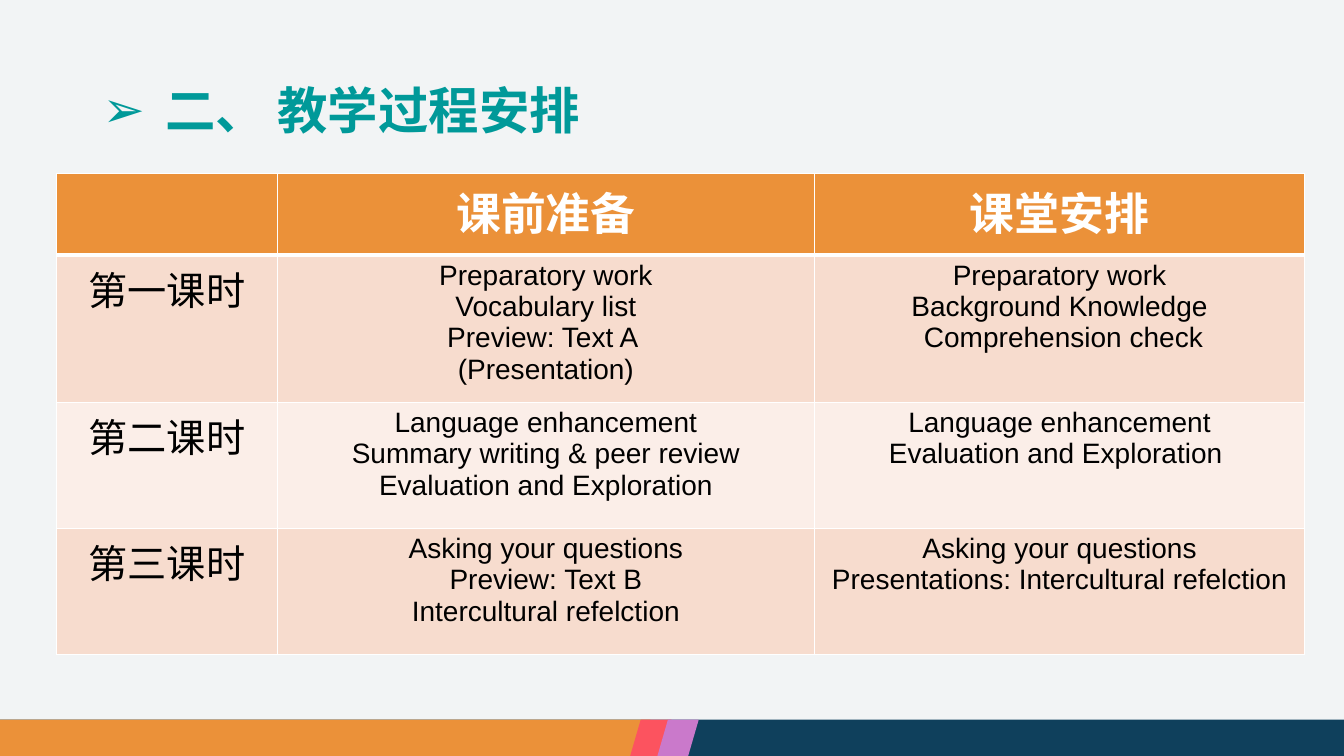
import lxml.etree
import pptx
import pptx.dml.color
import pptx.enum.shapes
import pptx.enum.text
import pptx.oxml.ns
import pptx.util

RGB = pptx.dml.color.RGBColor
SHAPE = pptx.enum.shapes.MSO_SHAPE
ALIGN = pptx.enum.text.PP_ALIGN
ANCHOR = pptx.enum.text.MSO_ANCHOR
qn = pptx.oxml.ns.qn

# Colours
PAPER = RGB(0xF2, 0xF4, 0xF5)
NAVY = RGB(0x0F, 0x40, 0x5C)
ORANGE = RGB(0xEB, 0x91, 0x39)
RED = RGB(0xFC, 0x53, 0x5F)
PURPLE = RGB(0xCA, 0x79, 0xCB)
TEAL = RGB(0x00, 0x99, 0x99)
PEACH = RGB(0xF7, 0xDC, 0xCE)
CREAM = RGB(0xFB, 0xEE, 0xE8)
WHITE = RGB(0xFF, 0xFF, 0xFF)
BLACK = RGB(0, 0, 0)

# Text formats
TITLE = {"size": 36, "bold": True, "color": TEAL}
HEAD = {"size": 32, "bold": True, "color": WHITE}
LABEL = {"size": 28, "bold": False, "color": BLACK}
BODY = {"size": 20, "bold": False, "color": BLACK}

# Footer: left, width, preset, colour
BAND = [
    (0, 1333, SHAPE.RECTANGLE, NAVY),
    (0, 645, SHAPE.RECTANGLE, ORANGE),
    (625, 41, SHAPE.PARALLELOGRAM, RED),
    (652, 41, SHAPE.PARALLELOGRAM, PURPLE),
]

# Lesson plan: one list of lines per cell
COLS = [219, 533, 486]
ROWS = [81, 146, 125, 125]
PLAN = [
    [[], ["课前准备"], ["课堂安排"]],
    [["第一课时"],
     ["Preparatory work", "Vocabulary list", "Preview: Text A ", "(Presentation)"],
     ["Preparatory work", "Background Knowledge", " Comprehension check"]],
    [["第二课时"],
     ["Language enhancement", "Summary writing & peer review",
      "Evaluation and Exploration"],
     ["Language enhancement", "Evaluation and Exploration "]],
    [["第三课时"],
     ["Asking your questions", "Preview: Text B", "Intercultural refelction"],
     ["Asking your questions", "Presentations: Intercultural refelction"]],
]


def px(num):
    """Length in EMU, at 100 px to the inch."""
    return pptx.util.Emu(num * 9144)


def style(font, look):
    values = {"name": "Arial", "size": pptx.util.Pt(look["size"]),
              "bold": look["bold"]}
    for key, value in values.items():
        setattr(font, key, value)
    font.color.rgb = look["color"]


def write(frame, lines, look, align):
    for num, line in enumerate(lines):
        para = frame.add_paragraph() if num else frame.paragraphs[0]
        para.alignment = align
        run = para.add_run()
        run.text = line
        style(run.font, look)


def add_band(slide, left, width, kind, fill):
    shape = slide.shapes.add_shape(kind, px(left), px(714), px(width), px(36))
    shape.shadow.inherit = False
    shape.fill.solid()
    shape.fill.fore_color.rgb = fill
    shape.line.fill.background()
    if kind == SHAPE.PARALLELOGRAM:
        shape.adjustments[0] = 0.29


def add_title(slide, text):
    box = slide.shapes.add_textbox(px(92), px(40), px(1150), px(145))
    frame = box.text_frame
    values = {"word_wrap": True, "vertical_anchor": ANCHOR.MIDDLE}
    for key, value in values.items():
        setattr(frame, key, value)
    write(frame, [text], TITLE, ALIGN.LEFT)
    para = frame.paragraphs[0]
    para.line_spacing = 0.9
    # Hanging arrow bullet
    props = para._p.get_or_add_pPr()
    for key, value in {"marL": px(62), "indent": px(-62)}.items():
        props.set(key, str(value))
    lxml.etree.SubElement(props, qn("a:buFont"), typeface="Arial")
    lxml.etree.SubElement(props, qn("a:buChar"), char="➢")


def edge(cell, sides):
    """White cell borders; sides maps each tag to its points."""
    props = cell._tc.get_or_add_tcPr()
    for tag, width in sides.items():
        line = lxml.etree.SubElement(props, qn(tag), w=str(pptx.util.Pt(width)))
        fill = lxml.etree.SubElement(line, qn("a:solidFill"))
        lxml.etree.SubElement(fill, qn("a:srgbClr"), val=str(WHITE))


def add_plan(slide):
    frame = slide.shapes.add_table(len(ROWS), len(COLS), px(56), px(172),
                                   px(sum(COLS)), px(sum(ROWS)))
    table = frame.table
    for col, width in zip(table.columns, COLS):
        col.width = px(width)
    for row, height in zip(table.rows, ROWS):
        row.height = px(height)
    for r, cells in enumerate(PLAN):
        for c, lines in enumerate(cells):
            cell = table.cell(r, c)
            edge(cell, {"a:lnL": 1, "a:lnR": 1, "a:lnT": 3 if r == 1 else 1,
                        "a:lnB": 3 if r == 0 else 1})
            cell.fill.solid()
            cell.fill.fore_color.rgb = (
                ORANGE if r == 0 else PEACH if r % 2 else CREAM)
            look = HEAD if r == 0 else LABEL if c == 0 else BODY
            write(cell.text_frame, lines, look, ALIGN.CENTER)


def main():
    deck = pptx.Presentation()
    deck.slide_width, deck.slide_height = px(1333), px(750)
    slide = deck.slides.add_slide(deck.slide_layouts[6])
    slide.background.fill.solid()
    slide.background.fill.fore_color.rgb = PAPER
    for part in BAND:
        add_band(slide, *part)
    add_title(slide, "二、 教学过程安排")
    add_plan(slide)
    deck.save("out.pptx")


if __name__ == "__main__":
    main()
